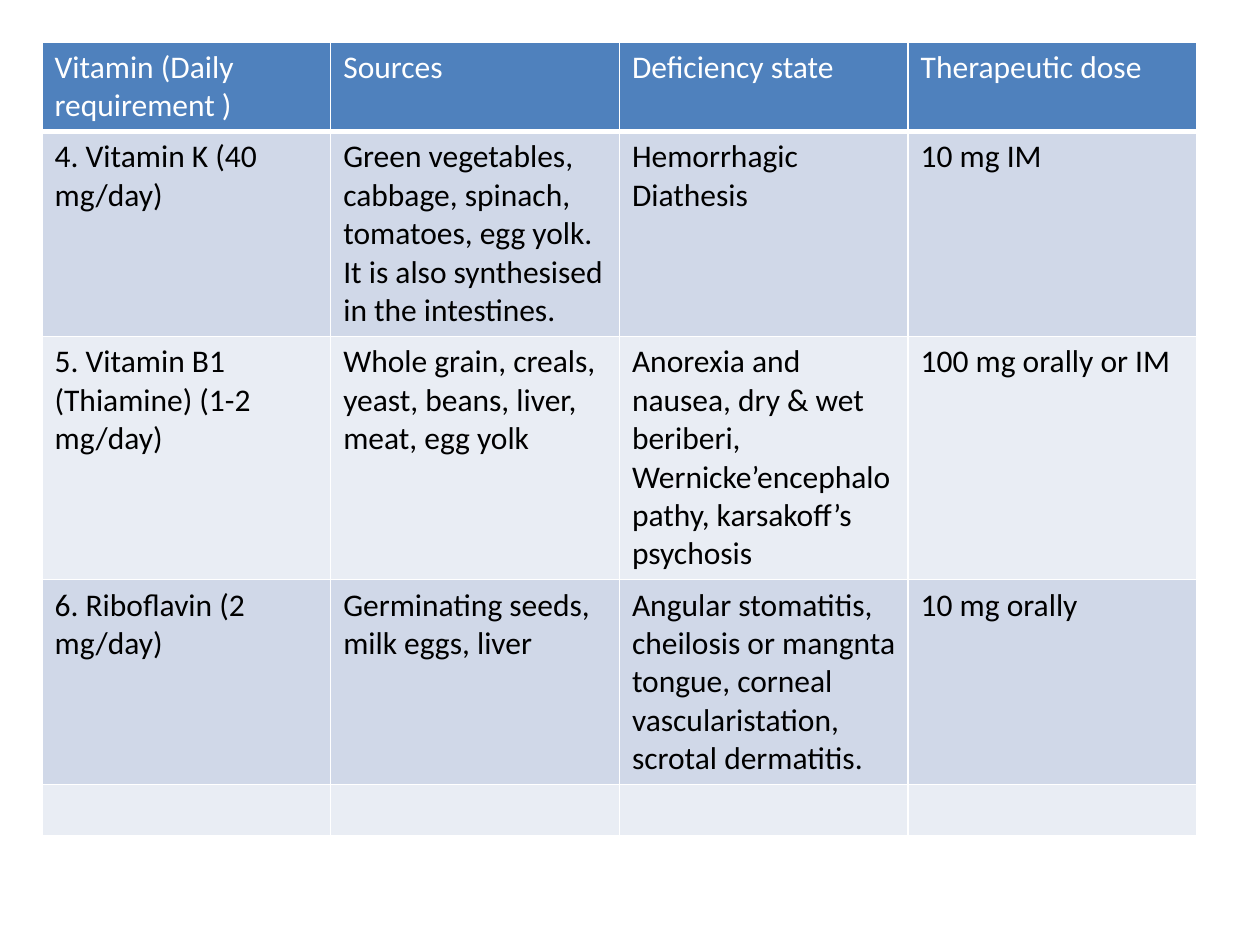
from lxml.etree import SubElement as Sub
from pptx import Presentation
from pptx.dml.color import RGBColor as RGB
from pptx.oxml.ns import qn
from pptx.util import Pt

WHITE = RGB(0xFF, 0xFF, 0xFF)
BLACK = RGB(0, 0, 0)
BLUE = RGB(0x4F, 0x81, 0xBD)
DARK = RGB(0xD0, 0xD8, 0xE8)
PALE = RGB(0xE9, 0xED, 0xF4)

WIDTH = 165
ROWS = [
    (50.4, ["Vitamin (Daily requirement )", "Sources",
            "Deficiency state", "Therapeutic dose"]),
    (117, ["4. Vitamin K (40 mg/day)",
           "Green vegetables, cabbage, spinach, tomatoes, egg yolk. "
           "It is also synthesised in the intestines.",
           "Hemorrhagic Diathesis", "10 mg IM"]),
    (139, ["5. Vitamin B1 (Thiamine) (1-2 mg/day)",
           "Whole grain, creals, yeast, beans, liver, meat, egg yolk",
           "Anorexia and nausea, dry & wet beriberi, "
           "Wernicke’encephalopathy, karsakoff’s psychosis",
           "100 mg orally or IM"]),
    (117, ["6. Riboflavin (2 mg/day)", "Germinating seeds, milk eggs, liver",
           "Angular stomatitis, cheilosis or mangnta tongue, corneal "
           "vascularistation, scrotal dermatitis.", "10 mg orally"]),
    (29.2, [""] * 4),
]


def write(frame, text, size=18, color=BLACK, font="Calibri"):
    para = frame.paragraphs[0]
    para.font.size = Pt(size)
    if text:
        run = para.add_run()
        run.text = text
        face = run.font
        face.name, face.size, face.bold = font, Pt(size), False
        face.color.rgb = color


def edge(cell, base=1):
    """Draw white borders; base is the width of the bottom one."""
    props = cell._tc.get_or_add_tcPr()
    for side, width in zip("LRTB", (1, 1, 1, base)):
        line = Sub(props, qn(f"a:ln{side}"), w=str(Pt(width)))
        fill = Sub(line, qn("a:solidFill"))
        Sub(fill, qn("a:srgbClr"), val=str(WHITE))


def paint(cell, color):
    cell.fill.solid()
    cell.fill.fore_color.rgb = color


def add_grid(slide, left, top):
    high = sum(height for height, _ in ROWS)
    cols = len(ROWS[0][1])
    grid = slide.shapes.add_table(len(ROWS), cols, Pt(left), Pt(top),
                                  Pt(WIDTH * cols), Pt(high)).table
    for col in grid.columns:
        col.width = Pt(WIDTH)
    for r, (height, texts) in enumerate(ROWS):
        grid.rows[r].height = Pt(height)
        head = r == 0
        back = BLUE if head else DARK if r % 2 else PALE
        for c, text in enumerate(texts):
            cell = grid.cell(r, c)
            edge(cell, base=3 if head else 1)
            paint(cell, back)
            write(cell.text_frame, text, color=WHITE if head else BLACK)


def main():
    deck = Presentation()
    deck.slide_width, deck.slide_height = Pt(720), Pt(540)
    slide = deck.slides.add_slide(deck.slide_layouts[6])
    add_grid(slide, 24, 24)
    deck.save("out.pptx")


if __name__ == "__main__":
    main()
